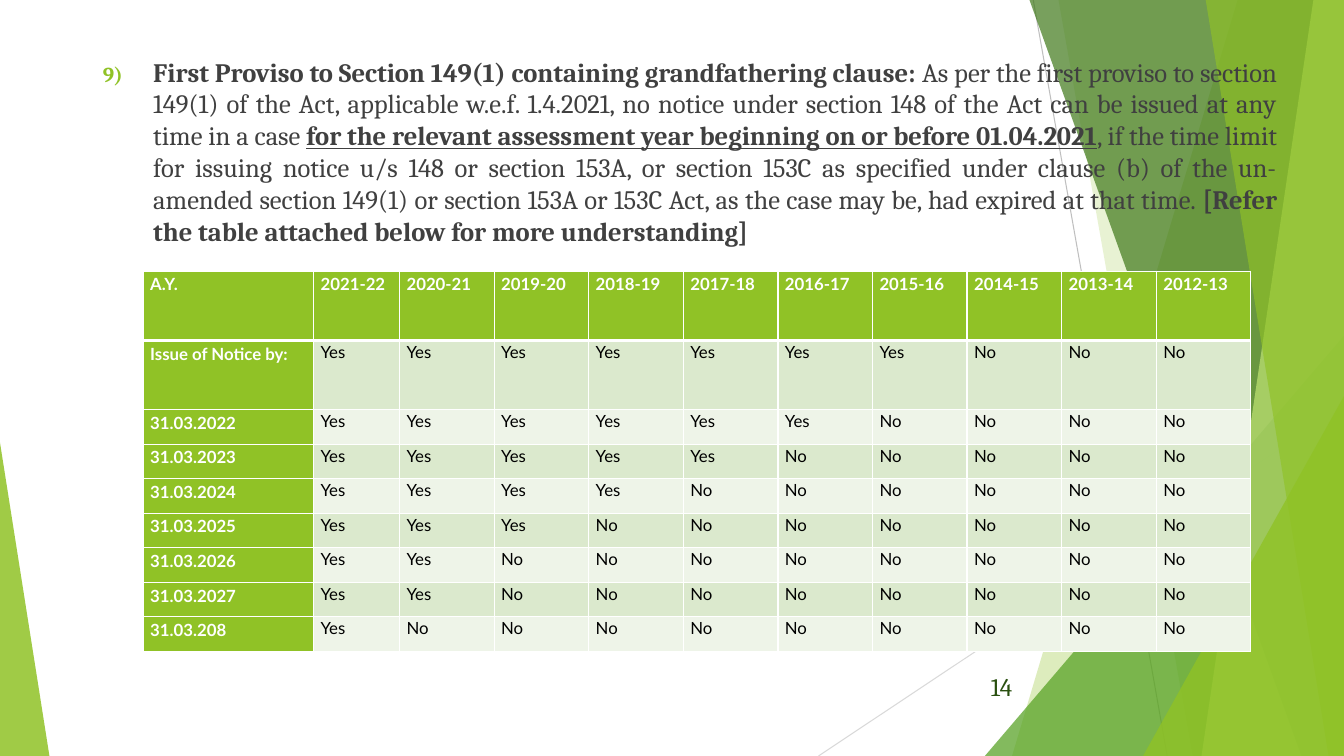
from dataclasses import dataclass

from lxml.etree import SubElement
from pptx import Presentation
from pptx.dml.color import RGBColor
from pptx.enum.shapes import MSO_CONNECTOR, MSO_SHAPE
from pptx.enum.text import MSO_ANCHOR, MSO_AUTO_SIZE, PP_ALIGN
from pptx.oxml.ns import qn
from pptx.util import Inches, Pt


@dataclass(frozen=True)
class Theme:
    lime: str = "90C226"
    green: str = "54A021"
    forest: str = "3F7819"
    pale_lime: str = "C0E474"
    page_number: str = "2A5010"
    text: str = "404040"
    black: str = "000000"
    white: str = "FFFFFF"
    band_dark: str = "DBE9CD"
    band_light: str = "EEF4E8"
    line_dark: str = "BFBFBF"
    line_light: str = "D9D9D9"
    serif: str = "Cambria"
    sans: str = "Lato"
    body_size: float = 19
    page_size: float = 18
    table_size: float = 12


class SlideBuilder:
    """Places elements; all lengths are percentages of the slide's size."""

    def __init__(self, presentation, theme):
        self.theme = theme
        self.width = presentation.slide_width
        self.height = presentation.slide_height
        self.slide = presentation.slides.add_slide(presentation.slide_layouts[1])
        title = self.slide.shapes.title.element
        title.getparent().remove(title)

    def x(self, share):
        return round(self.width * share / 100)

    def y(self, share):
        return round(self.height * share / 100)

    def box(self, left, top, width, height):
        return self.x(left), self.y(top), self.x(width), self.y(height)

    def style_font(self, font, name, size, color, bold=None):
        font.name, font.size, font.bold = name, Pt(size), bold
        font.color.rgb = RGBColor.from_string(color)

    def paint(self, shape, color, opacity):
        shape.shadow.inherit = False
        shape.line.fill.background()
        shape.fill.solid()
        shape.fill.fore_color.rgb = RGBColor.from_string(color)
        color_element = shape.element.spPr.find(f"{qn('a:solidFill')}/{qn('a:srgbClr')}")
        SubElement(color_element, qn("a:alpha"), val=str(opacity * 1000))

    def line(self, start_x, start_y, end_x, end_y, color):
        connector = self.slide.shapes.add_connector(
            MSO_CONNECTOR.STRAIGHT,
            self.x(start_x), self.y(start_y), self.x(end_x), self.y(end_y))
        connector.line.width = Pt(0.75)
        connector.line.color.rgb = RGBColor.from_string(color)
        SubElement(connector.element.spPr, qn("a:effectLst"))

    def side_band(self, top_x, bottom_x, color, opacity):
        """Fill from a slanted edge to the right side of the slide."""
        top = self.y(-0.1)
        builder = self.slide.shapes.build_freeform(self.x(top_x), top)
        builder.add_line_segments([
            (self.width, top), (self.width, self.height),
            (self.x(bottom_x), self.height)])
        self.paint(builder.convert_to_shape(), color, opacity)

    def triangle(self, left, top, width, apex, color, opacity):
        """Triangle standing on the bottom edge of the slide."""
        shape = self.slide.shapes.add_shape(
            MSO_SHAPE.ISOSCELES_TRIANGLE, *self.box(left, top, width, 100 - top))
        shape.adjustments[0] = apex
        self.paint(shape, color, opacity)

    def numbered_text(self, box, number, runs):
        body = self.slide.placeholders[1]
        body.left, body.top, body.width, body.height = self.box(*box)
        body.element.getparent().append(body.element)  # bring to the front
        frame = body.text_frame
        frame.word_wrap, frame.auto_size = True, MSO_AUTO_SIZE.NONE
        frame.vertical_anchor = MSO_ANCHOR.TOP
        paragraph = frame.paragraphs[0]
        paragraph.alignment = PP_ALIGN.JUSTIFY
        paragraph.space_before = Pt(10)
        for text, bold, underline in runs:
            run = paragraph.add_run()
            run.text = text
            self.style_font(run.font, self.theme.serif, self.theme.body_size,
                            self.theme.text, bold)
            run.font.underline = underline
        properties = paragraph._p.get_or_add_pPr()
        properties.set("marL", str(Inches(0.5)))
        properties.set("indent", str(-Inches(0.5)))
        bullet_color = SubElement(properties, qn("a:buClr"))
        SubElement(bullet_color, qn("a:srgbClr"), val=self.theme.lime)
        SubElement(properties, qn("a:buSzPct"), val="80000")
        SubElement(properties, qn("a:buFont"), typeface=self.theme.serif)
        SubElement(properties, qn("a:buAutoNum"), type="arabicParenR", startAt=str(number))

    def page_number(self, box, number):
        frame = self.slide.shapes.add_textbox(*self.box(*box)).text_frame
        frame.word_wrap = True
        frame.vertical_anchor = MSO_ANCHOR.MIDDLE
        paragraph = frame.paragraphs[0]
        paragraph.text = str(number)
        paragraph.alignment = PP_ALIGN.RIGHT
        self.style_font(paragraph.font, self.theme.serif, self.theme.page_size,
                        self.theme.page_number)

    def cell(self, cell, text, fill, heading, top_width, bottom_width):
        cell.margin_left = cell.margin_right = Inches(0.07)
        cell.margin_top = cell.margin_bottom = 0
        properties = cell._tc.get_or_add_tcPr()
        widths = {"lnL": 1, "lnR": 1, "lnT": top_width, "lnB": bottom_width}
        for side, width in widths.items():
            border = SubElement(properties, qn(f"a:{side}"), w=str(Pt(width)))
            border_fill = SubElement(border, qn("a:solidFill"))
            SubElement(border_fill, qn("a:srgbClr"), val=self.theme.white)
        cell.fill.solid()
        cell.fill.fore_color.rgb = RGBColor.from_string(fill)
        paragraph = cell.text_frame.paragraphs[0]
        paragraph.text = text
        paragraph.alignment = PP_ALIGN.JUSTIFY if heading else PP_ALIGN.LEFT
        paragraph.line_spacing = 1.15 if heading else 1.07
        self.style_font(paragraph.font, self.theme.sans, self.theme.table_size,
                        self.theme.white if heading else self.theme.black, heading)

    def table(self, left, top, columns, rows, values):
        table = self.slide.shapes.add_table(
            len(rows), len(columns),
            *self.box(left, top, sum(columns), sum(rows))).table
        for column, width in zip(table.columns, columns):
            column.width = self.x(width)
        for row, height in zip(table.rows, rows):
            row.height = self.y(height)
        bands = (self.theme.band_light, self.theme.band_dark)
        for row_index, row_values in enumerate(values):
            for column_index, text in enumerate(row_values):
                heading = row_index == 0 or column_index == 0
                self.cell(table.cell(row_index, column_index), text,
                          self.theme.lime if heading else bands[row_index % 2], heading,
                          top_width=3 if row_index == 1 else 1,
                          bottom_width=3 if row_index == 0 else 1)


def main():
    presentation = Presentation()
    presentation.slide_width, presentation.slide_height = Inches(13.33), Inches(7.5)
    theme = Theme()
    builder = SlideBuilder(presentation, theme)

    # Background decoration
    builder.line(76.88, 0, 86.85, 100, theme.line_dark)
    builder.line(100, 53.73, 60.9, 100, theme.line_light)
    builder.side_band(92.1, 75.3, theme.lime, 30)
    builder.side_band(78.75, 88.73, theme.lime, 20)
    builder.triangle(73.28, 44.4, 26.72, 1, theme.green, 72)
    builder.side_band(76.58, 96.83, theme.forest, 70)
    builder.side_band(97.73, 89.4, theme.pale_lime, 70)
    builder.side_band(89.7, 98.85, theme.lime, 65)
    builder.triangle(85.05, 52.4, 14.95, 1, theme.lime, 80)
    builder.triangle(0, 58.53, 3.68, 0, theme.lime, 85)

    # Numbered clause: text, bold, underline
    builder.numbered_text((6.9, 6.67, 88.88, 87.87), 9, [
        ("First Proviso to Section 149(1) containing grandfathering clause: ", True, False),
        ("As per the first proviso to section 149(1) of the Act, applicable w.e.f. 1.4.2021, "
         "no notice under section 148 of the Act can be issued at any time in a case ",
         False, False),
        ("for the relevant assessment year beginning on or before 01.04.2021", True, True),
        (", if the time limit for issuing notice u/s 148 or section 153A, or section 153C as "
         "specified under clause (b) of the un-amended section 149(1) or section 153A or 153C "
         "Act, as the case may be, had expired at that time. ", False, False),
        ("[Refer the table attached below for more understanding] ", True, False),
    ])
    builder.page_number((70.43, 88.13, 5.63, 5.33), 14)

    # Notice table: each deadline with its count of years still open
    years = [f"{year}-{year % 100 + 1}" for year in range(2021, 2011, -1)]
    open_years = {
        "Issue of Notice by:": 7, "31.03.2022": 6, "31.03.2023": 5, "31.03.2024": 4,
        "31.03.2025": 3, "31.03.2026": 2, "31.03.2027": 2, "31.03.208": 1,
    }
    values = [["A.Y.", *years]]
    for deadline, count in open_years.items():
        values.append([deadline] + ["Yes"] * count + ["No"] * (len(years) - count))
    builder.table(10.65, 35.87, [12.68, 6.4] + [7.04] * 9, [9.17] * 2 + [4.57] * 7, values)

    presentation.save("out.pptx")


if __name__ == "__main__":
    main()
